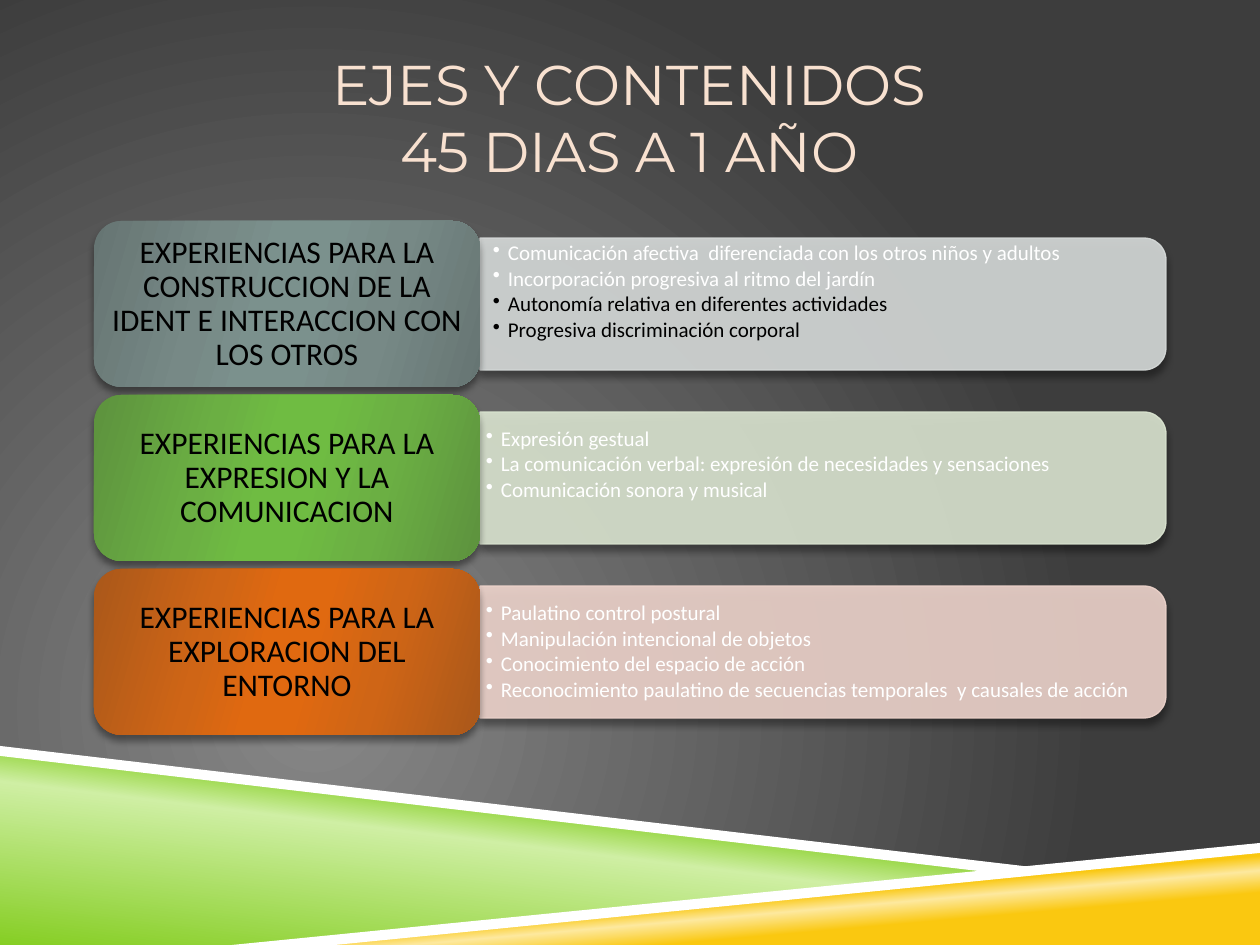
from copy import deepcopy

from lxml import etree
from pptx import Presentation
from pptx.dml.color import RGBColor
from pptx.enum.shapes import MSO_SHAPE
from pptx.enum.text import MSO_ANCHOR, MSO_AUTO_SIZE, PP_ALIGN
from pptx.oxml.ns import qn
from pptx.util import Emu, Pt

CENTER, LEFT = PP_ALIGN.CENTER, PP_ALIGN.LEFT
MIDDLE = MSO_ANCHOR.MIDDLE
FIXED_SIZE = MSO_AUTO_SIZE.NONE
CARD_SHAPE = MSO_SHAPE.ROUNDED_RECTANGLE
BAR_SHAPE = MSO_SHAPE.ROUND_2_SAME_RECTANGLE

SCALE = 914400 / 126
WHITE, BLACK = "FFFFFF", "000000"
ROW_TOP, ROW_PITCH = 221, 174
CARD_LEFT, CARD_WIDTH, CARD_HEIGHT = 94, 386, 166
BAR_LEFT, BAR_WIDTH, BAR_HEIGHT = 480, 686, 132
BULLETS_WIDTH, BULLETS_HEIGHT = 679, 120

BACKGROUND = [(0, "878787"), (100, "3D3D3D")]
GREEN_BAND = [(0, "86CE24"), (52, "CFEFA4"), (66, "86CE24")]
YELLOW_BAND = [(28, "FAC810"), (40, "FDE99F"), (48, "FAC810")]
CARD_STOPS = (0, 30, 45, 55, 73, 100)

AXES = [
    {
        "heading": "EXPERIENCIAS PARA LA CONSTRUCCION DE LA IDENT E INTERACCION CON LOS OTROS",
        "shades": ("667573", "778986", "7B918D"),
        "bar": "D7DBDA",
        "insets": (13, 6, 13, 30),
        "contents": [
            ("Comunicación afectiva  diferenciada con los otros niños y adultos", WHITE),
            ("Incorporación progresiva al ritmo del jardín", WHITE),
            ("Autonomía relativa en diferentes actividades", BLACK),
            ("Progresiva discriminación corporal", BLACK),
        ],
    },
    {
        "heading": "EXPERIENCIAS PARA LA EXPRESION Y LA COMUNICACION",
        "shades": ("5D923E", "6BAF43", "6FBC42"),
        "bar": "DBE5D1",
        "insets": (6, 4, 6, 30),
        "contents": [
            ("Expresión gestual", WHITE),
            ("La comunicación verbal: expresión de necesidades y sensaciones", WHITE),
            ("Comunicación sonora y musical", WHITE),
        ],
    },
    {
        "heading": "EXPERIENCIAS PARA LA EXPLORACION DEL ENTORNO",
        "shades": ("AA581A", "CF6516", "E06910"),
        "bar": "EED4CC",
        "insets": (6, 4, 6, 4),
        "contents": [
            ("Paulatino control postural", WHITE),
            ("Manipulación intencional de objetos", WHITE),
            ("Conocimiento del espacio de acción", WHITE),
            ("Reconocimiento paulatino de secuencias temporales  y causales de acción", WHITE),
        ],
    },
]


def px(length):
    """Turn pixels into EMU."""
    return Emu(round(length * SCALE))


def box(left, top, width, height):
    """Turn a pixel box into EMU lengths."""
    return [px(length) for length in (left, top, width, height)]


def color(hex_code):
    """Turn a hex string into a colour."""
    return RGBColor.from_string(hex_code)


def child(parent, tag, **attributes):
    """Append an XML child with the given attributes."""
    node = etree.SubElement(parent, qn(tag))
    for key, value in attributes.items():
        node.set(key, str(value))
    return node


def add_alpha(parent, percent):
    """Make the solid colour below the parent translucent."""
    child(parent.find(qn("a:solidFill"))[0], "a:alpha", val=percent * 1000)


def set_gradient(fill, parent, stops, angle=None):
    """Fill with a linear gradient, or a circular one when no angle is given."""
    fill.solid()
    solid = parent.find(qn("a:solidFill"))
    gradient = etree.Element(qn("a:gradFill"), rotWithShape="1")
    stop_list = child(gradient, "a:gsLst")
    for position, hex_code in stops:
        stop = child(stop_list, "a:gs", pos=position * 1000)
        child(stop, "a:srgbClr", val=hex_code)
    if angle is None:
        circle = child(gradient, "a:path", path="circle")
        child(circle, "a:fillToRect", l=50000, t=100000, r=100000, b=50000)
    else:
        child(gradient, "a:lin", ang=angle * 60000, scaled=0)
    parent.replace(solid, gradient)


def add_shadow(shape):
    """Give a shape a soft shadow below it."""
    shape.shadow.inherit = False
    effects = shape.element.spPr.find(qn("a:effectLst"))
    shadow = child(effects, "a:outerShdw", blurRad=Pt(4), dist=Pt(3.3),
                   dir=90 * 60000, algn="ctr", rotWithShape=0)
    child(child(shadow, "a:srgbClr", val=BLACK), "a:alpha", val=40000)


def set_frame(frame, insets):
    """Set wrapping, middle anchor and insets of a text frame."""
    frame.word_wrap = True
    frame.auto_size = FIXED_SIZE
    frame.vertical_anchor = MIDDLE
    (frame.margin_left, frame.margin_top,
     frame.margin_right, frame.margin_bottom) = box(*insets)


def write(paragraph, text, size, hex_code, font="Calibri", align=CENTER,
          spacing=0.9, after=0, bullet=False):
    """Write one formatted paragraph."""
    paragraph.text = text
    paragraph.alignment = align
    paragraph.line_spacing = spacing
    paragraph.space_after = Pt(after)
    for run in paragraph.runs:
        run.font.name = font
        run.font.size = Pt(size)
        run.font.color.rgb = color(hex_code)
    for line_break in paragraph._p.findall(qn("a:br")):
        line_break.append(deepcopy(paragraph.runs[0]._r.rPr))
    if bullet:
        paragraph.level = 1
        properties = paragraph._p.get_or_add_pPr()
        properties.set("marL", str(px(15)))
        properties.set("indent", str(-px(15)))
        child(properties, "a:buChar", char="•")


def add_band(slide, points, stops=None, angle=0):
    """Draw a corner band, white unless gradient stops are given."""
    builder = slide.shapes.build_freeform(*points[0], scale=SCALE)
    builder.add_line_segments(points[1:], close=True)
    band = builder.convert_to_shape()
    band.shadow.inherit = False
    band.line.fill.background()
    if stops:
        set_gradient(band.fill, band.element.spPr, stops, angle)
    else:
        band.fill.solid()
        band.fill.fore_color.rgb = color(WHITE)


def add_bar(slide, top, hex_code):
    """Draw a translucent bar whose rounded end points right."""
    left = BAR_LEFT + (BAR_WIDTH - BAR_HEIGHT) / 2
    unturned_top = top + (CARD_HEIGHT - BAR_WIDTH) / 2
    bar = slide.shapes.add_shape(BAR_SHAPE, *box(left, unturned_top, BAR_HEIGHT, BAR_WIDTH))
    bar.rotation = 90
    bar.fill.solid()
    bar.fill.fore_color.rgb = color(hex_code)
    bar.line.color.rgb = color(hex_code)
    bar.line.width = Pt(0.75)
    properties = bar.element.spPr
    add_alpha(properties, 90)
    add_alpha(properties.find(qn("a:ln")), 90)
    add_shadow(bar)


def add_contents(slide, top, contents, insets):
    """Write the bulleted contents over a bar."""
    text_top = top + (CARD_HEIGHT - BULLETS_HEIGHT) / 2
    frame = slide.shapes.add_textbox(
        *box(BAR_LEFT, text_top, BULLETS_WIDTH, BULLETS_HEIGHT)).text_frame
    set_frame(frame, insets)
    for index, (text, hex_code) in enumerate(contents):
        paragraph = frame.add_paragraph() if index else frame.paragraphs[0]
        write(paragraph, text, 12, hex_code, align=LEFT, after=1.7, bullet=True)


def add_card(slide, top, heading, shades):
    """Draw the heading card of an axis."""
    card = slide.shapes.add_shape(CARD_SHAPE, *box(CARD_LEFT, top, CARD_WIDTH, CARD_HEIGHT))
    stops = zip(CARD_STOPS, (*shades, *reversed(shades)))
    set_gradient(card.fill, card.element.spPr, stops, 16)
    card.line.fill.background()
    add_shadow(card)
    set_frame(card.text_frame, (9, 5, 9, 5))
    write(card.text_frame.paragraphs[0], heading, 18, BLACK)


def add_title(slide, text):
    """Place and write the slide title."""
    title = slide.shapes.title
    title.left, title.top, title.width, title.height = box(94, 38, 1071, 158)
    set_frame(title.text_frame, (0, 6, 0, 6))
    write(title.text_frame.paragraphs[0], text, 32, "F8E1D0", font="Montserrat", spacing=1.0)


def main():
    """Build and save the slide."""
    deck = Presentation()
    deck.slide_width, deck.slide_height = px(1260), px(945)
    slide = deck.slides.add_slide(deck.slide_layouts[5])
    backdrop = slide.background.fill
    backdrop.solid()
    set_gradient(backdrop, slide.element.find(".//" + qn("p:bgPr")), BACKGROUND)
    add_band(slide, [(0, 752), (998, 872), (252, 945), (0, 945)], GREEN_BAND, 277)
    add_band(slide, [(249, 945), (1260, 847), (1260, 945)], YELLOW_BAND, 265)
    add_band(slide, [(0, 746), (0, 756), (995, 873), (1048, 869)])
    add_band(slide, [(1260, 843), (232, 945), (335, 945), (1260, 853)])
    add_title(slide, "EJES Y CONTENIDOS\v45 DIAS A 1 AÑO")
    for row, axis in enumerate(AXES):
        top = ROW_TOP + row * ROW_PITCH
        add_bar(slide, top, axis["bar"])
        add_contents(slide, top, axis["contents"], axis["insets"])
        add_card(slide, top, axis["heading"], axis["shades"])
    deck.save("out.pptx")


if __name__ == "__main__":
    main()
